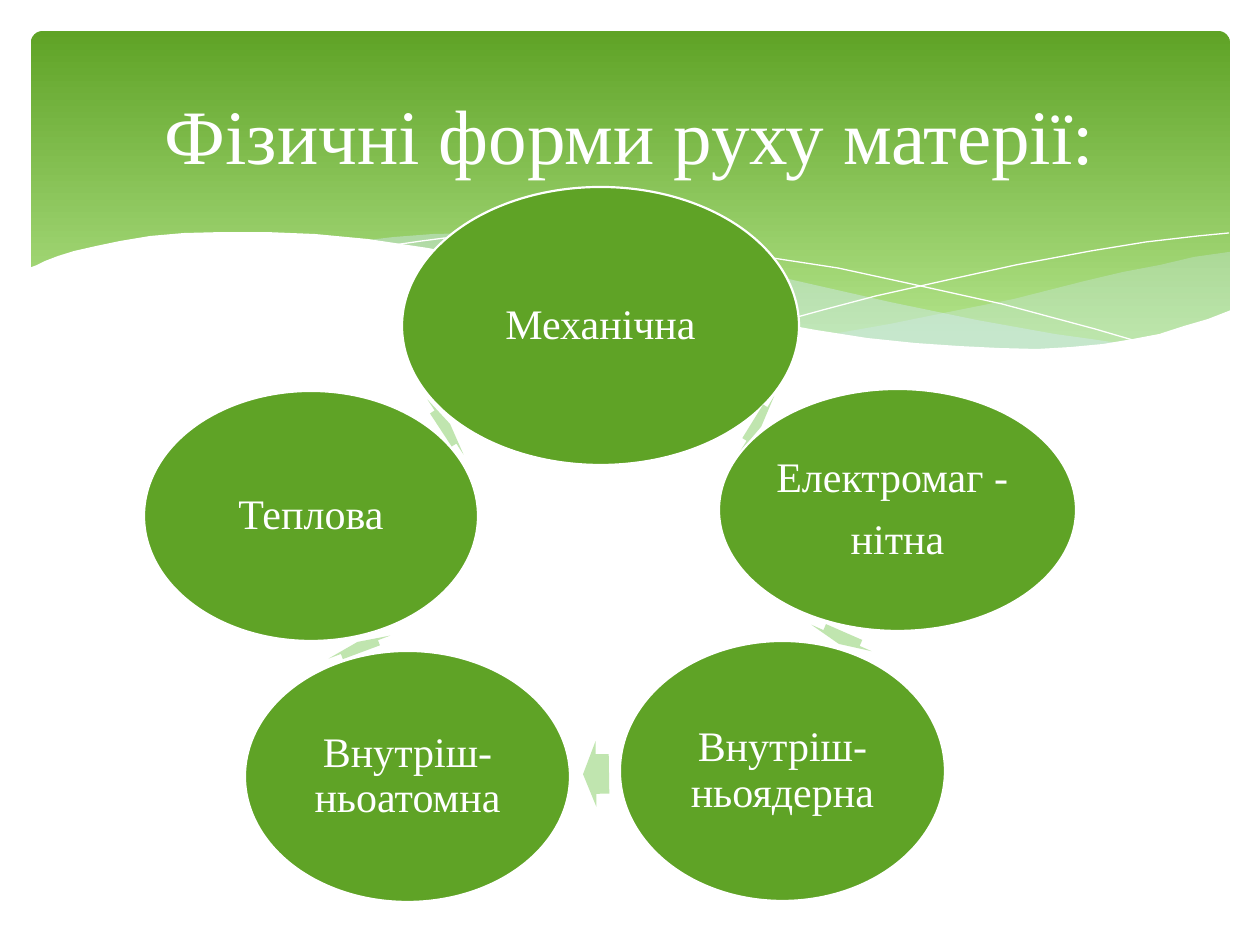
"""Build the slide about the physical forms of motion of matter."""
from lxml.etree import SubElement
from pptx import Presentation
from pptx.dml.color import RGBColor
from pptx.enum.shapes import MSO_SHAPE as Shape
from pptx.enum.text import MSO_ANCHOR as Anchor, PP_ALIGN as Align
from pptx.oxml.ns import qn
from pptx.util import Pt

EMU_PER_PX = 914400 / 126
GREEN = RGBColor(0x5F, 0xA3, 0x26)
LIGHT_GREEN = RGBColor(0xB2, 0xE3, 0x89)
PALE_GREEN = RGBColor(0xC0, 0xE5, 0xAF)
PALE_BLUE = RGBColor(0xD6, 0xEC, 0xFF)
WHITE = RGBColor(0xFF, 0xFF, 0xFF)

RIGHT_WAVE = [
    (1229, 252), (1194, 257), (1160, 265), (1123, 272), (1085, 281), (1014, 299), (949, 312),
    (890, 324), (833, 334), (871, 339), (906, 343), (939, 347), (984, 349), (1026, 350),
    (1076, 348), (1110, 344), (1140, 339), (1169, 331), (1196, 324), (1230, 311), (1230, 252),
]
MIDDLE_WAVE = [
    (1125, 344), (1091, 339), (1055, 334), (977, 320), (890, 302), (793, 280), (736, 266),
    (682, 256), (633, 247), (586, 241), (529, 236), (479, 233), (433, 234), (394, 237),
    (360, 241), (407, 247), (456, 256), (509, 266), (566, 280), (668, 302), (736, 318),
    (799, 329), (857, 338), (910, 345), (959, 349), (1003, 350), (1056, 350), (1092, 348),
]
FALLING_LINE = [
    (389, 246), (401, 244), (422, 241), (445, 238), (471, 237), (505, 236), (546, 236),
    (591, 238), (643, 242), (701, 248), (766, 257), (838, 268), (916, 285), (1002, 304),
    (1095, 329), (1143, 343),
]
RISING_LINE = [
    (772, 324), (823, 310), (876, 296), (943, 281), (1016, 265), (1091, 251), (1146, 242),
    (1198, 236), (1229, 233),
]
WHITE_WAVE = [
    (1231, 310), (1208, 319), (1184, 326), (1159, 334), (1133, 339), (1103, 344), (1071, 347),
    (1037, 349), (999, 348), (959, 346), (915, 343), (867, 338), (816, 330), (760, 320),
    (699, 309), (634, 294), (563, 277), (493, 261), (428, 248), (368, 239), (315, 234),
    (266, 232), (223, 232), (184, 233), (150, 236), (120, 241), (96, 246), (74, 251),
    (58, 256), (45, 261), (37, 265), (29, 268), (29, 415), (1231, 415),
]
CYCLE = [
    (["Механічна"], (402, 187, 397, 278), (752, 391, 10, 66), 31.7),
    (["Електромаг - ", "нітна"], (719, 389, 357, 242), (835, 605, 13, 66), 113.7),
    (["Внутріш-ньоядерна"], (620, 641, 325, 260), (583, 741, 26, 66), 179.2),
    (["Внутріш-ньоатомна"], (245, 651, 325, 251), (354, 614, 11, 66), 249.6),
    (["Теплова"], (144, 391, 334, 250), (440, 394, 11, 66), 326.7),
]


def px(length):
    """Turn pixels into EMU."""
    return round(length * EMU_PER_PX)


def write_text(shape, lines, size, inset, line_spacing=1.0, space_after=0):
    """Fill a shape with centred white paragraphs."""
    frame = shape.text_frame
    frame.word_wrap = True
    frame.vertical_anchor = Anchor.MIDDLE
    frame.margin_left = frame.margin_right = px(inset)
    frame.margin_top = frame.margin_bottom = px(inset)
    for index, line in enumerate(lines):
        paragraph = frame.add_paragraph() if index else frame.paragraphs[0]
        paragraph.alignment = Align.CENTER
        paragraph.line_spacing = line_spacing
        paragraph.space_after = Pt(space_after)
        run = paragraph.add_run()
        run.text = line
        run.font.name = "Times New Roman"
        run.font.size = Pt(size)
        run.font.color.rgb = WHITE


class SlideBuilder:
    """Hold the style and the slide, and draw each kind of element."""

    def __init__(self, slide):
        self.shapes = slide.shapes
        self.outline_width = Pt(1.25)

    def style(self, shape, fill=None, line=None, width=0, opacity=100):
        """Set fill, line and shadow of a shape."""
        shape.shadow.inherit = False
        if fill is None:
            shape.fill.background()
        else:
            shape.fill.solid()
            shape.fill.fore_color.rgb = fill
        if opacity < 100:
            color = shape.element.spPr.find(f".//{qn('a:srgbClr')}")
            SubElement(color, qn("a:alpha"), val=str(opacity * 1000))
        if line is None:
            shape.line.fill.background()
        else:
            shape.line.color.rgb = line
            shape.line.width = width

    def preset(self, kind, box):
        """Add a preset shape at a box in pixels."""
        return self.shapes.add_shape(kind, *map(px, box))

    def banner(self, box):
        """Add the gradient header panel."""
        shape = self.preset(Shape.ROUNDED_RECTANGLE, box)
        shape.adjustments[0] = 0.034
        self.style(shape)
        shape.fill.gradient()
        shape.fill.gradient_angle = 270
        for stop, color, position in zip(shape.fill.gradient_stops, (GREEN, LIGHT_GREEN), (0, 0.9)):
            stop.color.rgb = color
            stop.position = position

    def curve(self, points, closed=True, **style):
        """Add an outline through the points."""
        builder = self.shapes.build_freeform(*points[0], scale=EMU_PER_PX)
        builder.add_line_segments(points[1:], close=closed)
        self.style(builder.convert_to_shape(), **style)

    def node(self, lines, box):
        """Add a labelled ellipse."""
        shape = self.preset(Shape.OVAL, box)
        self.style(shape, fill=GREEN, line=WHITE, width=self.outline_width)
        write_text(shape, lines, size=24, inset=4, line_spacing=0.9, space_after=9.7)

    def arrow(self, box, rotation):
        """Add a block arrow between two ellipses."""
        shape = self.preset(Shape.RIGHT_ARROW, box)
        shape.adjustments[0] = 0.6
        shape.adjustments[1] = 0.5
        shape.rotation = rotation
        self.style(shape, fill=PALE_GREEN)

    def title(self, text, box):
        """Add the slide title."""
        write_text(self.shapes.add_textbox(*map(px, box)), [text], size=44, inset=6)


def main():
    """Build and save the presentation."""
    presentation = Presentation()
    presentation.slide_width = px(1260)
    presentation.slide_height = px(945)
    builder = SlideBuilder(presentation.slides.add_slide(presentation.slide_layouts[6]))

    builder.banner((31, 31, 1199, 340))
    builder.curve(RIGHT_WAVE, fill=PALE_BLUE, opacity=29)
    builder.curve(MIDDLE_WAVE, fill=PALE_BLUE, opacity=40)
    for points in (FALLING_LINE, RISING_LINE):
        builder.curve(points, closed=False, line=WHITE)
    builder.curve(WHITE_WAVE, fill=WHITE)

    for lines, node_box, arrow_box, rotation in CYCLE:
        builder.node(lines, node_box)
        builder.arrow(arrow_box, rotation)
    builder.title("Фізичні форми руху матерії:", (63, 47, 1134, 173))
    presentation.save("out.pptx")


if __name__ == "__main__":
    main()
